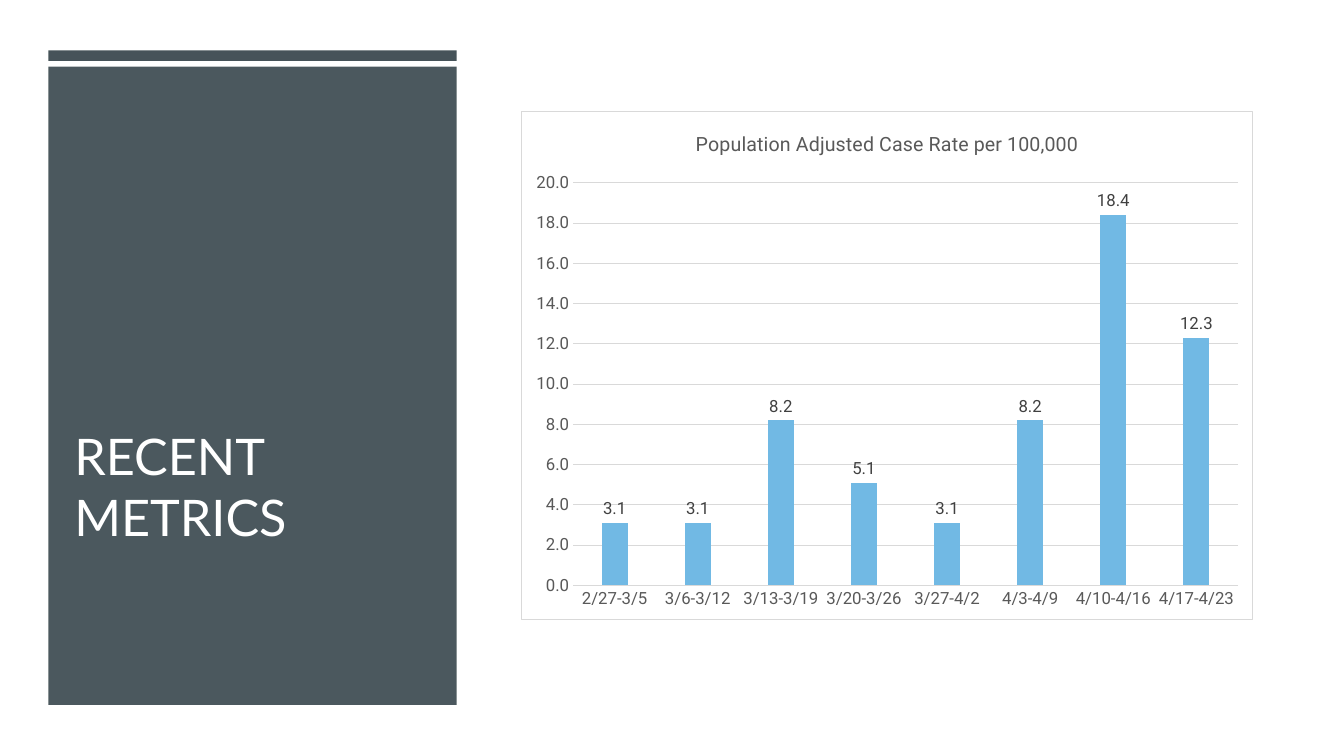
from lxml.etree import SubElement
from pptx import Presentation
from pptx.chart.data import CategoryChartData
from pptx.dml.color import RGBColor
from pptx.enum.chart import XL_CHART_TYPE, XL_LABEL_POSITION, XL_TICK_MARK
from pptx.enum.shapes import MSO_SHAPE
from pptx.enum.text import MSO_ANCHOR
from pptx.oxml import parse_xml
from pptx.oxml.ns import nsdecls, qn
from pptx.util import Pt

COLORS = {
    "white": "FFFFFF",
    "slate": "465359",
    "bar": "71B9E4",
    "grid": "D9D9D9",
    "axis_text": "595959",
    "label_text": "404040",
}


def style_font(font, face="Roboto", size=12, color="axis_text"):
    font.name = face
    font.size = Pt(size)
    font.bold = False
    font.color.rgb = RGBColor.from_string(COLORS[color])


def write(frame, text, **style):
    """Put text in the frame's first paragraph and format it."""
    run = frame.paragraphs[0].add_run()
    run.text = text
    style_font(run.font, **style)


prs = Presentation()
prs.slide_width, prs.slide_height = Pt(960), Pt(540)
slide = prs.slides.add_slide(prs.slide_layouts[6])
slide.background.fill.solid()
slide.background.fill.fore_color.rgb = RGBColor.from_string(COLORS["white"])

# Dark side panel with a thin strip above it
for top, height, opacity in ((47.5, 456, 97), (36, 7.5, 100)):
    panel = slide.shapes.add_shape(
        MSO_SHAPE.RECTANGLE, Pt(34.6), Pt(top), Pt(291.6), Pt(height))
    panel.shadow.inherit = False
    panel.line.fill.background()
    panel.fill.solid()
    panel.fill.fore_color.rgb = RGBColor.from_string(COLORS["slate"])
    if opacity < 100:
        panel_color = panel.fill._xPr.find(qn("a:solidFill"))[0]
        SubElement(panel_color, qn("a:alpha"), val=str(opacity * 1000))

heading = slide.shapes.add_textbox(Pt(46), Pt(120.2), Pt(268.6), Pt(273.6)).text_frame
heading.word_wrap = True
heading.vertical_anchor = MSO_ANCHOR.BOTTOM
write(heading, "RECENT METRICS", face="Lato", size=36, color="white")

# Weekly case rates
case_rates = {
    "2/27-3/5": 3.1,
    "3/6-3/12": 3.1,
    "3/13-3/19": 8.2,
    "3/20-3/26": 5.1,
    "3/27-4/2": 3.1,
    "4/3-4/9": 8.2,
    "4/10-4/16": 18.4,
    "4/17-4/23": 12.3,
}
rate_data = CategoryChartData(number_format="0.0")
rate_data.categories = list(case_rates)
rate_data.add_series("Series 1", list(case_rates.values()))
chart = slide.shapes.add_chart(
    XL_CHART_TYPE.COLUMN_CLUSTERED,
    Pt(372.4), Pt(79.2), Pt(522.7), Pt(363.6), rate_data).chart
style_font(chart.font)
chart.has_legend = False
write(chart.chart_title.text_frame, "Population Adjusted Case Rate per 100,000", size=14)
chart.chart_title.include_in_layout = False

chart._chartSpace.chart.addnext(parse_xml(
    f'<c:spPr {nsdecls("c", "a")}>'
    f'<a:solidFill><a:srgbClr val="{COLORS["white"]}"/></a:solidFill>'
    f'<a:ln w="{Pt(0.75)}"><a:solidFill><a:srgbClr val="{COLORS["grid"]}"/></a:solidFill></a:ln>'
    '</c:spPr>'))

weeks, rates = chart.category_axis, chart.value_axis
for axis in (weeks, rates):
    axis.major_tick_mark = axis.minor_tick_mark = XL_TICK_MARK.NONE
    style_font(axis.tick_labels.font)
rates.minimum_scale, rates.maximum_scale, rates.major_unit = 0, 20, 2
rates.tick_labels.number_format = "0.0"
rates.tick_labels.number_format_is_linked = False
rates.format.line.fill.background()
for line in (weeks.format.line, rates.major_gridlines.format.line):
    line.width = Pt(0.75)
    line.color.rgb = RGBColor.from_string(COLORS["grid"])

plot = chart.plots[0]
plot.gap_width, plot.overlap = 219, -27
plot.vary_by_categories = False
bars = plot.series[0]
bars.format.fill.solid()
bars.format.fill.fore_color.rgb = RGBColor.from_string(COLORS["bar"])
labels = bars.data_labels
labels.show_value = True
labels.position = XL_LABEL_POSITION.OUTSIDE_END
labels.number_format = "0.0"
labels.number_format_is_linked = False
style_font(labels.font, color="label_text")

prs.save("out.pptx")
